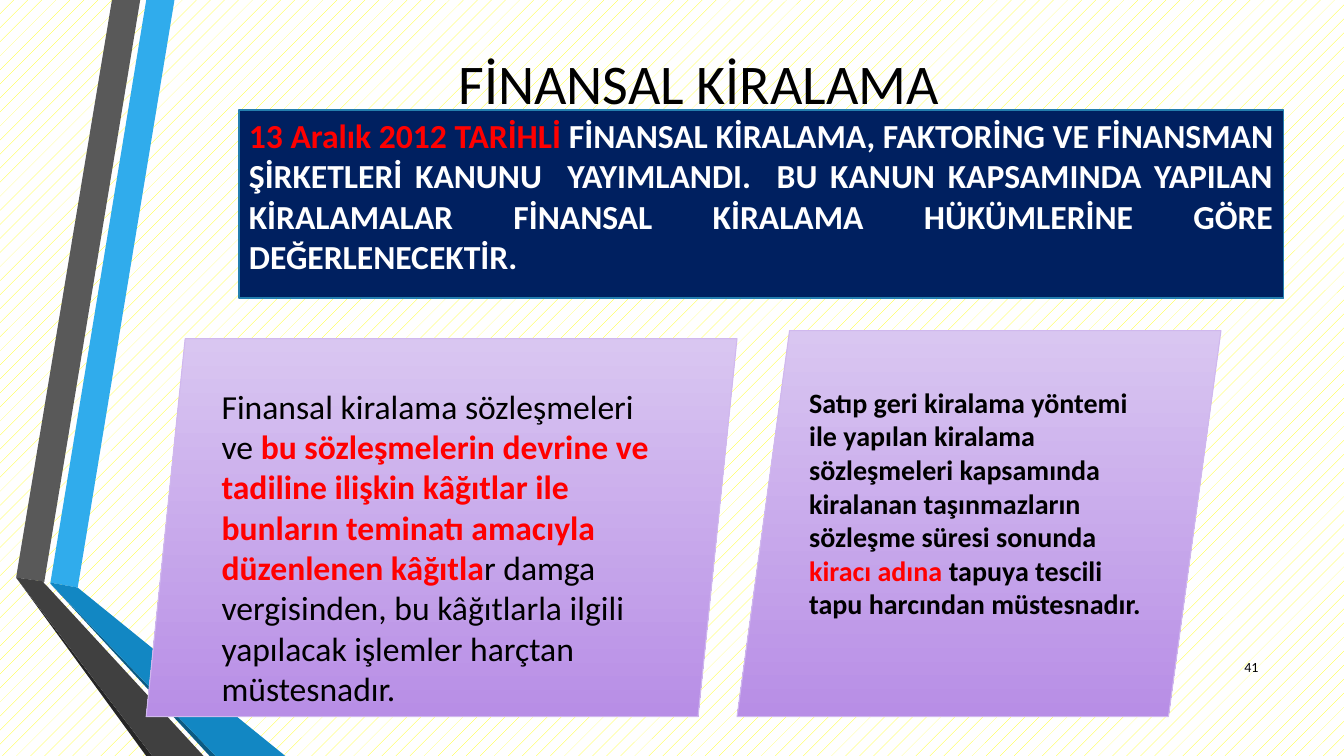
from dataclasses import dataclass

from pptx import Presentation
from pptx.dml.color import RGBColor
from pptx.enum.dml import MSO_PATTERN
from pptx.enum.shapes import MSO_SHAPE
from pptx.enum.text import MSO_ANCHOR, PP_ALIGN
from pptx.util import Inches, Pt

DOTTED = MSO_PATTERN.PERCENT_5
RECTANGLE, PARALLELOGRAM = MSO_SHAPE.RECTANGLE, MSO_SHAPE.PARALLELOGRAM
TOP, MIDDLE = MSO_ANCHOR.TOP, MSO_ANCHOR.MIDDLE
LEFT, CENTER = PP_ALIGN.LEFT, PP_ALIGN.CENTER
RIGHT, JUSTIFY = PP_ALIGN.RIGHT, PP_ALIGN.JUSTIFY


@dataclass(frozen=True)
class Theme:
    font: str = "Calibri"
    # Type sizes
    title: int = 40
    large: int = 24
    medium: int = 20
    small: int = 10
    # Text and background colours
    black: str = "000000"
    white: str = "FFFFFF"
    red: str = "FF0000"
    yellow: str = "FFFF00"
    # Box colours
    navy: str = "002060"
    navy_edge: str = "247FAF"
    lilac_top: str = "D9C6F1"
    lilac_bottom: str = "B88EE6"
    lilac_edge: str = "D0B8EE"
    # Ribbon colours
    sky: str = "30ACEC"
    sky_fold: str = "1287C3"
    sky_shade: str = "0C5A82"
    grey: str = "595959"
    grey_fold: str = "404040"
    grey_shade: str = "262626"


def rgb(value):
    return RGBColor.from_string(value)


def apply(target, values):
    for name, value in values.items():
        setattr(target, name, value)


class SlideBuilder:
    """Places elements on a grid of 100 columns by 100 rows."""

    def __init__(self, presentation, theme):
        self.theme = theme
        self.slide = presentation.slides.add_slide(presentation.slide_layouts[6])
        self.column = presentation.slide_width / 100
        self.row = presentation.slide_height / 100

    def place(self, x, y):
        return round(x * self.column), round(y * self.row)

    def background(self, fore, back):
        fill = self.slide.background.fill
        fill.patterned()
        fill.pattern = DOTTED
        fill.fore_color.rgb, fill.back_color.rgb = rgb(fore), rgb(back)

    def ribbon(self, points, color):
        start, *rest = [self.place(*point) for point in points]
        builder = self.slide.shapes.build_freeform(*start)
        builder.add_line_segments(rest, close=True)
        shape = builder.convert_to_shape()
        shape.shadow.inherit = False
        shape.fill.solid()
        shape.fill.fore_color.rgb = rgb(color)
        shape.line.fill.background()

    def add_text(self, shape, runs, size, align, anchor):
        frame = shape.text_frame
        apply(frame, {"word_wrap": True, "vertical_anchor": anchor})
        paragraph = frame.paragraphs[0]
        paragraph.alignment = align
        for text, color, bold in runs:
            run = paragraph.add_run()
            run.text = text
            apply(run.font, {"name": self.theme.font, "size": Pt(size), "bold": bold})
            run.font.color.rgb = rgb(color)

    def label(self, area, text, size, align):
        box = self.slide.shapes.add_textbox(*self.place(*area[:2]), *self.place(*area[2:]))
        self.add_text(box, [(text, self.theme.black, False)], size, align, MIDDLE)

    def box(self, kind, area, fills, edge, edge_width, runs, size, align, slant=None):
        shape = self.slide.shapes.add_shape(
            kind, *self.place(*area[:2]), *self.place(*area[2:]))
        shape.shadow.inherit = False
        if slant is not None:
            shape.adjustments[0] = slant
        if len(fills) == 1:
            shape.fill.solid()
            shape.fill.fore_color.rgb = rgb(fills[0])
        else:
            shape.fill.gradient()
            shape.fill.gradient_angle = 270
            for stop, position, color in zip(shape.fill.gradient_stops, (0, 1), fills):
                stop.position = position
                stop.color.rgb = rgb(color)
        shape.line.color.rgb = rgb(edge)
        shape.line.width = Pt(edge_width)
        self.add_text(shape, runs, size, align, TOP)


def main():
    theme = Theme()
    presentation = Presentation()
    apply(presentation, {"slide_width": Inches(13.33), "slide_height": Inches(7.5)})
    builder = SlideBuilder(presentation, theme)
    builder.background(theme.yellow, theme.white)

    # Folded ribbons on the left edge
    ribbons = [
        ([(3.75, 77.07), (5.78, 77.73), (12.98, 0), (10.88, 0)], theme.sky),
        ([(10.43, 0), (8.33, 0), (1.2, 76.4), (3.3, 76.93)], theme.grey),
        ([(1.2, 76.4), (10.88, 100), (11.33, 100)], theme.grey_shade),
        ([(3.75, 77.2), (15.6, 100), (16.05, 100)], theme.sky_shade),
        ([(3.75, 77.07), (3.75, 77.2), (16.05, 100), (21.23, 100), (5.78, 77.73)],
         theme.sky_fold),
        ([(15.15, 100), (3.6, 77.73), (3.23, 77.07), (3.3, 76.93), (1.2, 76.4),
          (11.33, 100)], theme.grey_fold),
    ]
    for points, color in ribbons:
        builder.ribbon(points, color)

    # Title and page number
    builder.label((20.1, 4.13, 63.77, 13.33), "FİNANSAL KİRALAMA", theme.title, CENTER)
    builder.label((89.87, 85.6, 4.5, 5.33), "41", theme.small, RIGHT)

    # Law announcement
    builder.box(
        RECTANGLE, (17.78, 14.53, 77.72, 24.93), [theme.navy], theme.navy_edge, 1.25,
        [("13 Aralık 2012 TARİHLİ ", theme.red, True),
         ("FİNANSAL KİRALAMA, FAKTORİNG VE FİNANSMAN ŞİRKETLERİ KANUNU  YAYIMLANDI.  "
          "BU KANUN KAPSAMINDA YAPILAN KİRALAMALAR FİNANSAL KİRALAMA HÜKÜMLERİNE GÖRE "
          "DEĞERLENECEKTİR.", theme.white, True)],
        theme.large, JUSTIFY)

    # Exemption panels
    contract_runs = [
        ("Finansal kiralama sözleşmeleri ve ", theme.black, False),
        ("bu sözleşmelerin devrine ve tadiline ilişkin kâğıtlar ile bunların teminatı "
         "amacıyla düzenlenen kâğıtla", theme.red, True),
        ("r damga vergisinden, bu kâğıtlarla ilgili yapılacak işlemler harçtan "
         "müstesnadır.", theme.black, False),
    ]
    leaseback_runs = [
        ("Satıp geri kiralama yöntemi ile yapılan kiralama sözleşmeleri kapsamında "
         "kiralanan taşınmazların sözleşme süresi sonunda ", theme.black, True),
        ("kiracı adına ", theme.red, True),
        ("tapuya tescili tapu harcından müstesnadır.", theme.black, True),
    ]
    panels = [
        ((10.88, 44.8, 43.96, 50), contract_runs, theme.large, 0.103),
        ((54.84, 43.73, 36.01, 51.07), leaseback_runs, theme.medium, 0.136),
    ]
    for area, runs, size, slant in panels:
        builder.box(PARALLELOGRAM, area, [theme.lilac_top, theme.lilac_bottom],
                    theme.lilac_edge, 0.75, runs, size, LEFT, slant)

    presentation.save("out.pptx")


if __name__ == "__main__":
    main()
